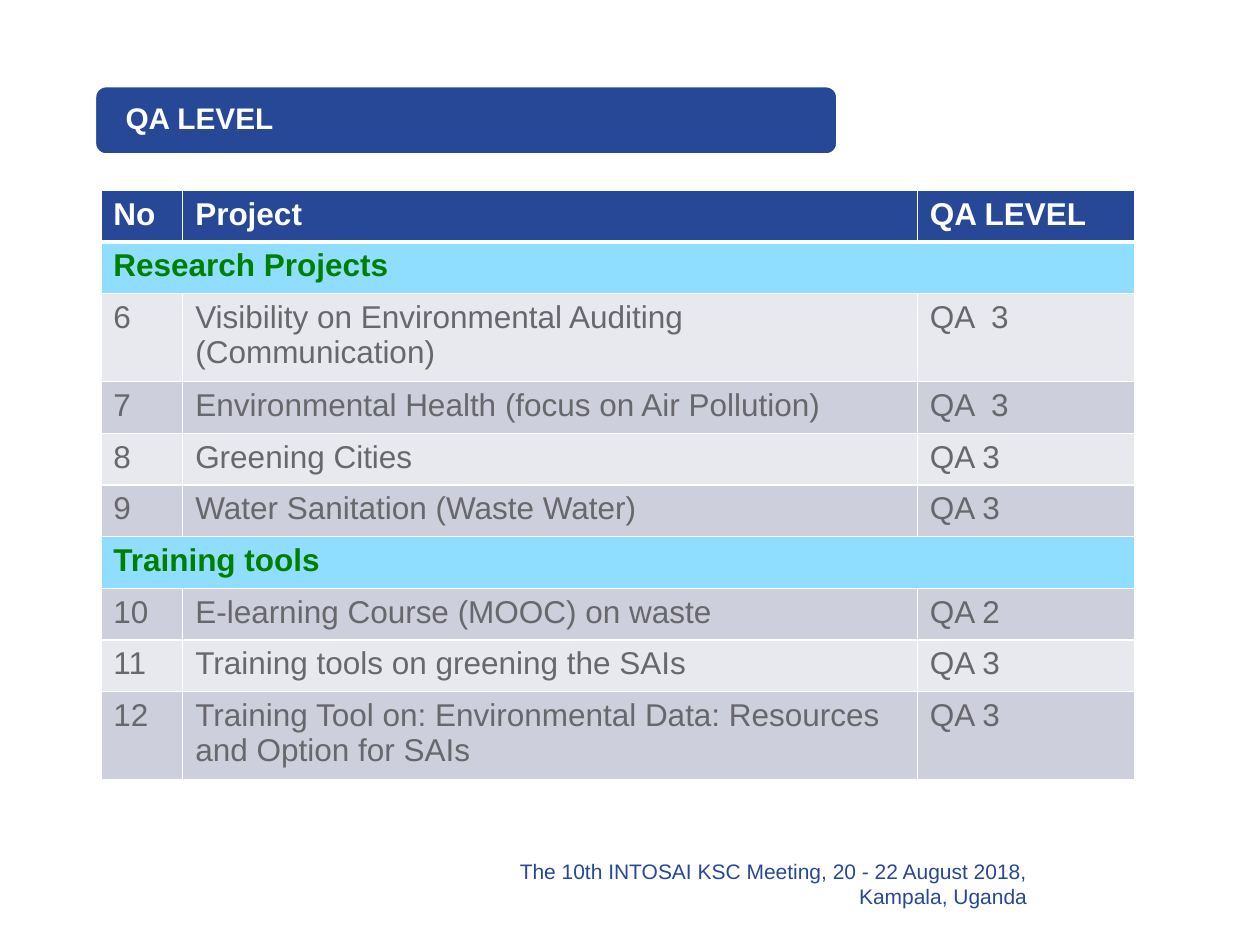
from dataclasses import dataclass

from lxml.etree import SubElement
from pptx import Presentation
from pptx.dml.color import RGBColor
from pptx.enum.shapes import MSO_SHAPE
from pptx.enum.text import MSO_ANCHOR, PP_ALIGN
from pptx.oxml.ns import qn
from pptx.util import Inches, Pt


@dataclass(frozen=True)
class Theme:
    font: str = "Arial"
    blue: str = "274897"
    white: str = "FFFFFF"
    sky: str = "90DEFF"
    green: str = "008000"
    grey: str = "68676C"
    bands: tuple = ("E8E9EF", "CDCFDD")
    title: int = 17
    body: int = 18
    foot: int = 12


THEME = Theme()
WIDE, HIGH = 10, 7.5
COLS = (0.65, 5.83, 1.73)
LINE, TALL = 0.41, 0.7  # heights of rows with one and two lines
HEAD = ("No", "Project", "QA LEVEL")
GROUPS = {
    "Research Projects": (
        ("6", "Visibility on Environmental Auditing (Communication)", "QA  3"),
        ("7", "Environmental Health (focus on Air Pollution)", "QA  3"),
        ("8", "Greening Cities", "QA 3"),
        ("9", "Water Sanitation (Waste Water)", "QA 3"),
    ),
    "Training tools": (
        ("10", "E-learning Course (MOOC) on waste", "QA 2"),
        ("11", "Training tools on greening the SAIs", "QA 3"),
        ("12", "Training Tool on: Environmental Data: Resources and Option for SAIs", "QA 3"),
    ),
}


def rgb(code):
    return RGBColor.from_string(code)


def box(x, y, w, h):
    """Turn shares of the slide into a left, top, width and height."""
    return [Inches(round(n, 2)) for n in (x * WIDE, y * HIGH, w * WIDE, h * HIGH)]


def write(frame, text, size, color, bold=False, align=PP_ALIGN.LEFT):
    frame.word_wrap = True
    para = frame.paragraphs[0]
    para.text = text
    para.alignment = align
    font = para.font
    font.name, font.size, font.bold = THEME.font, Pt(size), bold
    font.color.rgb = rgb(color)


def border(cell, top=1, bottom=1):
    props = cell._tc.get_or_add_tcPr()
    for side, width in zip("LRTB", (1, 1, top, bottom)):
        line = SubElement(props, qn(f"a:ln{side}"), w=str(Pt(width)))
        fill = SubElement(line, qn("a:solidFill"))
        SubElement(fill, qn("a:srgbClr"), val=THEME.white)


def paint(cell, text, fill, color, bold=False, **edges):
    border(cell, **edges)
    cell.fill.solid()
    cell.fill.fore_color.rgb = rgb(fill)
    write(cell.text_frame, text, THEME.body, color, bold)


def banner(slide, text):
    shape = slide.shapes.add_shape(
        MSO_SHAPE.ROUNDED_RECTANGLE, *box(0.075, 0.091, 0.59, 0.073))
    shape.shadow.inherit = False
    shape.fill.solid()
    shape.fill.fore_color.rgb = rgb(THEME.blue)
    shape.line.color.rgb = rgb(THEME.white)
    shape.line.width = Pt(2)
    frame = shape.text_frame
    frame.margin_left = frame.margin_right = Inches(0.22)
    frame.margin_top = frame.margin_bottom = 0
    frame.vertical_anchor = MSO_ANCHOR.MIDDLE
    write(frame, text, THEME.title, THEME.white, True)
    frame.paragraphs[0].line_spacing = 0.9


def grid(slide):
    rows = [HEAD]
    for name, items in GROUPS.items():
        rows += [(name,), *items]
    tall = [any(len(text) > 50 for text in row) for row in rows]
    sizes = [TALL if big else LINE for big in tall]
    place = box(0.08, 0.201, sum(COLS) / WIDE, sum(sizes) / HIGH)
    table = slide.shapes.add_table(len(rows), len(COLS), *place).table
    for col, width in zip(table.columns, COLS):
        col.width = Inches(width)
    for r, (row, size) in enumerate(zip(rows, sizes)):
        table.rows[r].height = Inches(size)
        if len(row) == 1:
            table.cell(r, 0).merge(table.cell(r, len(COLS) - 1))
            look = (THEME.sky, THEME.green, True)
        elif r == 0:
            look = (THEME.blue, THEME.white, True)
        else:
            look = (THEME.bands[r % 2], THEME.grey)
        edges = {"top": 3 if r == 1 else 1, "bottom": 3 if r == 0 else 1}
        for c, text in enumerate(row):
            paint(table.cell(r, c), text, *look, **edges)


def footer(slide, text):
    frame = slide.shapes.add_textbox(*box(0.39, 0.909, 0.435, 0.052)).text_frame
    frame.vertical_anchor = MSO_ANCHOR.MIDDLE
    write(frame, text, THEME.foot, THEME.blue, align=PP_ALIGN.RIGHT)


def main():
    deck = Presentation()
    deck.slide_width, deck.slide_height = Inches(WIDE), Inches(HIGH)
    slide = deck.slides.add_slide(deck.slide_layouts[6])
    grid(slide)
    footer(slide, "The 10th INTOSAI KSC Meeting, 20 - 22 August 2018, Kampala, Uganda")
    banner(slide, "QA LEVEL")
    deck.save("out.pptx")


if __name__ == "__main__":
    main()
